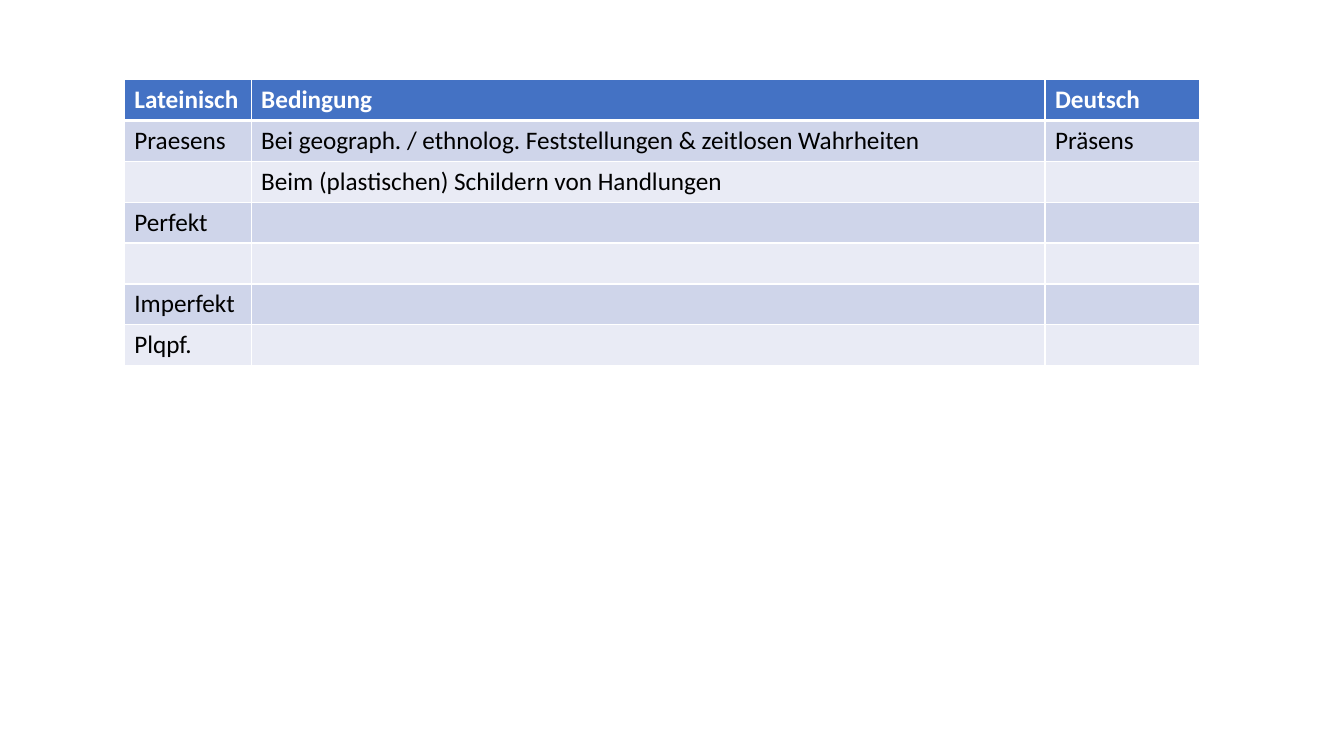
"""Build a slide with a table of Latin tenses and their German rendering."""
from dataclasses import dataclass

from lxml import etree
from pptx import Presentation
from pptx.dml.color import RGBColor
from pptx.oxml import ns
from pptx.util import Pt


@dataclass(frozen=True)
class Theme:
    """Hold the colours, font and line widths."""
    font: str = "Calibri"
    size: int = 18
    header: str = "4472C4"
    bands: tuple = ("CFD5EA", "E9EBF5")
    light: str = "FFFFFF"
    dark: str = "000000"
    thin: int = 1
    thick: int = 3


THEME = Theme()
COLUMN_WIDTHS = (90.6, 567, 110.4)
ROW_HEIGHT = 29.2
TENSES = (
    ("Lateinisch", "Bedingung", "Deutsch"),
    ("Praesens", "Bei geograph. / ethnolog. Feststellungen & zeitlosen Wahrheiten",
     "Präsens"),
    ("", "Beim (plastischen) Schildern von Handlungen", ""),
    ("Perfekt", "", ""),
    ("", "", ""),
    ("Imperfekt", "", ""),
    ("Plqpf.", "", ""),
)


def add_text(tf, text, *, size=THEME.size, color=THEME.dark, bold=False):
    """Write one formatted run into a text frame."""
    r = tf.paragraphs[0].add_run()
    r.text = text
    r.font.name = THEME.font
    r.font.size = Pt(size)
    r.font.bold = bold
    r.font.color.rgb = RGBColor.from_string(color)


def set_borders(cell, top, bottom):
    """Draw light borders with the given top and bottom widths in points."""
    tc_pr = cell._tc.get_or_add_tcPr()
    widths = {"a:lnL": THEME.thin, "a:lnR": THEME.thin, "a:lnT": top, "a:lnB": bottom}
    for tag, width in widths.items():
        ln = etree.SubElement(tc_pr, ns.qn(tag), w=str(Pt(width)))
        fill = etree.SubElement(ln, ns.qn("a:solidFill"))
        etree.SubElement(fill, ns.qn("a:srgbClr"), val=THEME.light)


def format_cell(cell, text, row):
    """Fill, border and label a cell according to its row."""
    is_header = row == 0
    set_borders(cell, THEME.thick if row == 1 else THEME.thin,
                THEME.thick if is_header else THEME.thin)
    cell.fill.solid()
    color = THEME.header if is_header else THEME.bands[(row - 1) % 2]
    cell.fill.fore_color.rgb = RGBColor.from_string(color)
    if text:
        add_text(cell.text_frame, text, bold=is_header,
                 color=THEME.light if is_header else THEME.dark)


def add_tense_table(s, rows, left, top):
    """Add the table of tenses at the given position."""
    frame = s.shapes.add_table(len(rows), len(COLUMN_WIDTHS), Pt(left), Pt(top),
                               Pt(sum(COLUMN_WIDTHS)), Pt(ROW_HEIGHT * len(rows)))
    table = frame.table
    for column, width in zip(table.columns, COLUMN_WIDTHS):
        column.width = Pt(width)
    for i, texts in enumerate(rows):
        table.rows[i].height = Pt(ROW_HEIGHT)
        for j, text in enumerate(texts):
            format_cell(table.cell(i, j), text, i)


def main():
    """Create and save the presentation."""
    prs = Presentation()
    prs.slide_width, prs.slide_height = Pt(960), Pt(540)
    s = prs.slides.add_slide(prs.slide_layouts[6])
    add_tense_table(s, TENSES, 88.8, 56.8)
    prs.save("out.pptx")


if __name__ == "__main__":
    main()
